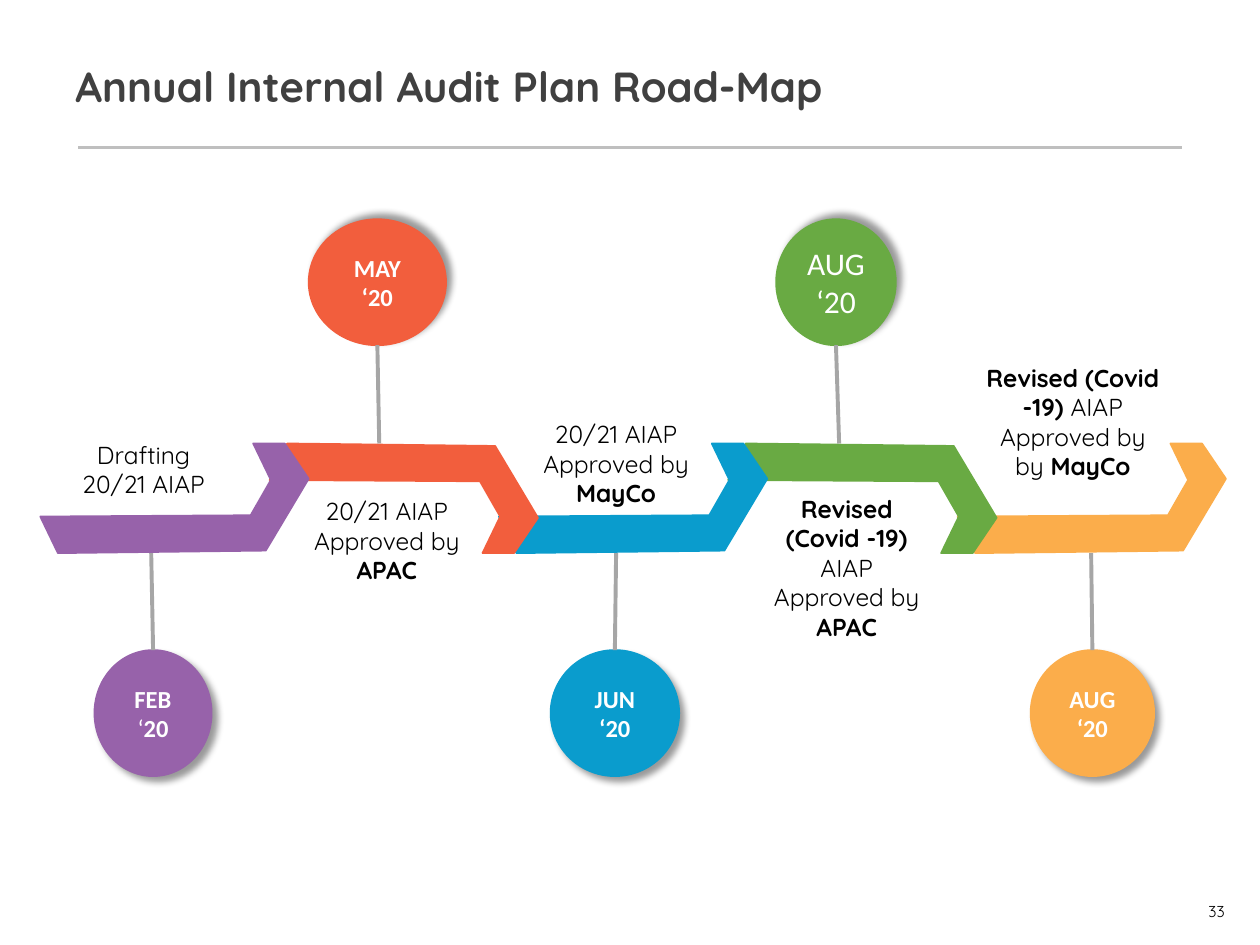
from dataclasses import dataclass

from lxml.etree import SubElement
from pptx import Presentation
from pptx.dml.color import RGBColor
from pptx.enum.shapes import MSO_CONNECTOR, MSO_SHAPE
from pptx.enum.text import MSO_ANCHOR, MSO_AUTO_SIZE, PP_ALIGN
from pptx.oxml.ns import qn
from pptx.util import Inches, Pt


@dataclass(frozen=True)
class Theme:
    heading_font: str = "Quicksand"
    badge_font: str = "Calibri"
    title: str = "404040"
    body: str = "000000"
    badge_text: str = "FFFFFF"
    rule: str = "BFBFBF"
    stem: str = "A6A6A6"
    purple: str = "9762AA"
    red: str = "F25E3D"
    blue: str = "0A9CCD"
    green: str = "69AA43"
    orange: str = "FBAD4B"
    title_size: float = 24
    body_size: float = 14
    large_badge_size: float = 18
    number_size: float = 9


@dataclass(frozen=True)
class Milestone:
    color: str
    badge: list
    badge_left: float
    badge_width: float
    stem_col: float
    caption: list
    caption_box: tuple
    badge_size: float = Theme.body_size


class RoadMap:
    COLUMNS, ROWS = 100, 75
    RIBBON_LEFT, RIBBON_STEP = 3.2, 18.2
    RIBBON_TOP, RIBBON_HEIGHT = 35.2, 8.7
    BADGE_HEIGHT, UPPER_BADGE, LOWER_BADGE = 10, 17.4, 51.6
    RIBBON = [(16.9, 0), (19.4, 0), (21.3, 2.8), (17.9, 8.5),
              (1.4, 8.7), (0, 5.8), (16.7, 5.7), (18.3, 2.9)]

    def __init__(self, theme):
        self.theme = theme
        self.deck = Presentation()
        self.deck.slide_width, self.deck.slide_height = Inches(10), Inches(7.5)
        self.slide = self.deck.slides.add_slide(self.deck.slide_layouts[6])

    def at(self, *lengths):
        cells = (self.deck.slide_width / self.COLUMNS, self.deck.slide_height / self.ROWS)
        return [round(length * cells[i % 2]) for i, length in enumerate(lengths)]

    def add_runs(self, frame, runs, font, size, color, align):
        frame.word_wrap = True
        paragraph = frame.paragraphs[0]
        paragraph.alignment = align
        for wording, bold in runs:
            run = paragraph.add_run()
            run.text = wording
            run.font.name, run.font.size, run.font.bold = font, Pt(size), bold
            run.font.color.rgb = RGBColor.from_string(color)

    def text(self, box, runs, size, color, align=PP_ALIGN.LEFT, anchor=MSO_ANCHOR.MIDDLE):
        frame = self.slide.shapes.add_textbox(*self.at(*box)).text_frame
        self.add_runs(frame, runs, self.theme.heading_font, size, color, align)
        frame.vertical_anchor = anchor
        return frame

    def caption(self, box, runs):
        frame = self.text(box, runs, self.theme.body_size, self.theme.body,
                          PP_ALIGN.CENTER, MSO_ANCHOR.TOP)
        frame.auto_size = MSO_AUTO_SIZE.SHAPE_TO_FIT_TEXT

    def page_number(self, box, number):
        frame = self.text(box, [(number, False)], self.theme.number_size,
                          self.theme.body, PP_ALIGN.RIGHT)
        frame.margin_left = frame.margin_top = Inches(0.08)
        frame.margin_right = frame.margin_bottom = 0

    def line(self, ends, color, width):
        connector = self.slide.shapes.add_connector(MSO_CONNECTOR.STRAIGHT, *self.at(*ends))
        connector.line.color.rgb = RGBColor.from_string(color)
        connector.line.width = Pt(width)
        SubElement(connector._element.spPr, qn("a:effectLst"))
        return connector

    def paint(self, shape, color):
        shape.shadow.inherit = False
        shape.fill.solid()
        shape.fill.fore_color.rgb = shape.line.color.rgb = RGBColor.from_string(color)
        shape.line.width = Pt(1)

    def ribbon(self, index, color, upper):
        left = self.RIBBON_LEFT + index * self.RIBBON_STEP
        points = [self.at(left + x, self.RIBBON_TOP + (self.RIBBON_HEIGHT - y if upper else y))
                  for x, y in self.RIBBON]
        builder = self.slide.shapes.build_freeform(*points[0])
        builder.add_line_segments(points[1:])
        self.paint(builder.convert_to_shape(), color)

    def badge(self, milestone, upper):
        top = self.UPPER_BADGE if upper else self.LOWER_BADGE
        box = (milestone.badge_left, top, milestone.badge_width, self.BADGE_HEIGHT)
        circle = self.slide.shapes.add_shape(MSO_SHAPE.OVAL, *self.at(*box))
        self.paint(circle, milestone.color)
        self.cast_shadow(circle, 315 if upper else 45)
        self.add_runs(circle.text_frame, milestone.badge, self.theme.badge_font,
                      milestone.badge_size, self.theme.badge_text, PP_ALIGN.CENTER)
        circle.text_frame.vertical_anchor = MSO_ANCHOR.MIDDLE
        return circle

    def cast_shadow(self, shape, angle):
        effects = shape._element.spPr.find(qn("a:effectLst"))
        shadow = SubElement(effects, qn("a:outerShdw"), blurRad=str(Pt(4)), dist=str(Pt(4)),
                            dir=str(angle * 60000), algn="ctr", rotWithShape="0")
        tint = SubElement(shadow, qn("a:srgbClr"), val="000000")
        SubElement(tint, qn("a:alpha"), val="40000")

    def stem(self, milestone, circle, upper):
        center = milestone.badge_left + milestone.badge_width / 2
        start = self.RIBBON_TOP if upper else self.RIBBON_TOP + self.RIBBON_HEIGHT
        end = self.UPPER_BADGE + self.BADGE_HEIGHT if upper else self.LOWER_BADGE
        stem = self.line((milestone.stem_col, start, center, end), self.theme.stem, 2.25)
        if not upper:
            stem.end_connect(circle, 0)

    def timeline(self, milestones):
        steps = list(enumerate(milestones))
        for index, milestone in reversed(steps):
            self.ribbon(index, milestone.color, index % 2 == 1)
        for index, milestone in steps:
            upper = index % 2 == 1
            circle = self.badge(milestone, upper)
            self.stem(milestone, circle, upper)
            self.caption(milestone.caption_box, milestone.caption)


def main():
    theme = Theme()
    milestones = [
        Milestone(theme.purple, [("FEB", True), (" ‘", False), ("20", True)], 7.5, 9.3, 12,
                  [("Drafting 20/21 AIAP", False)], (4.3, 34.4, 14.2, 5.7)),
        Milestone(theme.red, [("MAY ‘20", True)], 24.5, 10.9, 30.1,
                  [("20/21 AIAP Approved by ", False), ("APAC", True)],
                  (23.6, 38.9, 14.2, 8.1)),
        Milestone(theme.blue, [("JUN ‘20", True)], 43.7, 10.2, 48.9,
                  [("20/21 AIAP Approved by ", False), ("MayCo", True)],
                  (41.8, 32.8, 14.2, 10.4)),
        Milestone(theme.green, [("AUG ‘20", False)], 61.6, 9.5, 66.6,
                  [("Revised (Covid -19) ", True), ("AIAP Approved by ", False), ("APAC", True)],
                  (60.1, 38.7, 14.2, 12.8), theme.large_badge_size),
        Milestone(theme.orange, [("AUG ‘20", True)], 81.8, 9.8, 86.6,
                  [("Revised (Covid -19) ", True), ("AIAP Approved by by ", False),
                   ("MayCo", True)], (77.1, 28.3, 16.1, 12.8)),
    ]
    road_map = RoadMap(theme)
    road_map.line((6.2, 11.7, 93.8, 11.7), theme.rule, 2)
    road_map.text((5, 3, 90, 7.6), [("Annual Internal Audit Plan Road-Map", True)],
                  theme.title_size, theme.title)
    road_map.page_number((91.6, 70.7, 5.6, 2.5), "33")
    road_map.timeline(milestones)
    road_map.deck.save("out.pptx")


if __name__ == "__main__":
    main()
